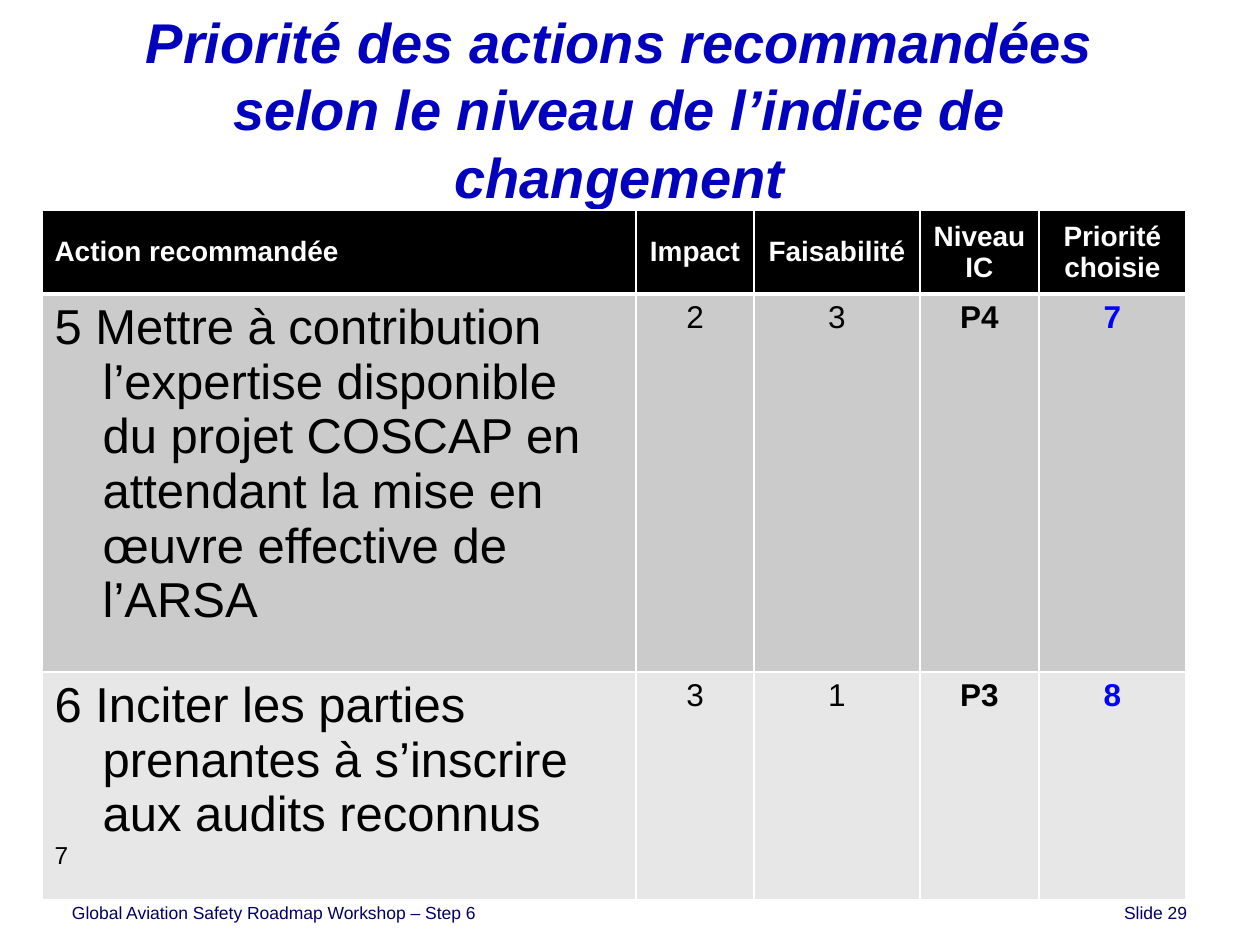
from lxml import etree
from pptx import Presentation
from pptx.dml.color import RGBColor
from pptx.enum.text import MSO_ANCHOR, MSO_AUTO_SIZE, PP_ALIGN
from pptx.oxml.ns import qn
from pptx.util import Pt

LEFT, CENTER, RIGHT = PP_ALIGN.LEFT, PP_ALIGN.CENTER, PP_ALIGN.RIGHT
TOP, MIDDLE = MSO_ANCHOR.TOP, MSO_ANCHOR.MIDDLE
EMU_PER_PX = 914400 / 126


def px(length):
    return round(length * EMU_PER_PX)


def write(para, text, size, color, bold=False, italic=False, align=LEFT, hanging=0):
    para.alignment = align
    if hanging:
        properties = para._p.get_or_add_pPr()
        properties.set("marL", str(px(hanging)))
        properties.set("indent", str(px(-hanging)))
    span = para.add_run()
    span.text = text
    span.font.name = "Arial"
    span.font.size = Pt(size)
    span.font.bold = bold
    span.font.italic = italic
    span.font.color.rgb = RGBColor.from_string(color)


deck = Presentation()
deck.slide_width, deck.slide_height = px(1260), px(945)
page = deck.slides.add_slide(deck.slide_layouts[5])

# Title
title = page.shapes.title
title.left, title.top, title.width, title.height = px(63), px(52), px(1113), px(113)
title.text_frame.auto_size = MSO_AUTO_SIZE.NONE
title.text_frame.vertical_anchor = MIDDLE
write(title.text_frame.paragraphs[0],
      "Priorité des actions recommandées selon le niveau de l’indice de changement",
      32, "0202BE", bold=True, italic=True, align=CENTER)

# Table of recommended actions; each cell of the first column lists its paragraphs
header = ["Action recommandée", "Impact", "Faisabilité", "Niveau IC", "Priorité choisie"]
actions = [
    [[("5 Mettre à contribution l’expertise disponible du projet COSCAP en attendant "
       "la mise en œuvre effective de l’ARSA", 28)], "2", "3", "P4", "7"],
    [[("6 Inciter les parties prenantes à s’inscrire aux audits reconnus", 28), ("7", 14)],
     "3", "1", "P3", "8"],
]
column_widths = [594, 118, 166, 119, 147]
row_heights = [84, 378, 228]
row_fills = ["000000", "CBCBCB", "E7E7E7"]
value_formats = [{"color": "000000"}, {"color": "000000"},
                 {"color": "000000", "bold": True}, {"color": "0000FF", "bold": True}]

table = page.shapes.add_table(len(row_heights), len(column_widths), px(42), px(210),
                              px(sum(column_widths)), px(sum(row_heights))).table
for column, width in zip(table.columns, column_widths):
    column.width = px(width)
for row, height in zip(table.rows, row_heights):
    row.height = px(height)

for column, text in enumerate(header):
    cell = table.cell(0, column)
    cell.vertical_anchor = MIDDLE
    write(cell.text_frame.paragraphs[0], text, 16, "FFFFFF", bold=True,
          align=CENTER if column else LEFT)

for row, (action, *values) in enumerate(actions, start=1):
    frame = table.cell(row, 0).text_frame
    for index, (text, size) in enumerate(action):
        para = frame.add_paragraph() if index else frame.paragraphs[0]
        write(para, text, size, "000000", hanging=48)
    for column, (value, style) in enumerate(zip(values, value_formats), start=1):
        cell = table.cell(row, column)
        cell.vertical_anchor = TOP
        write(cell.text_frame.paragraphs[0], value, 18, align=CENTER, **style)

# White cell borders, thicker under the header
for row, fill in enumerate(row_fills):
    for cell in table.rows[row].cells:
        properties = cell._tc.get_or_add_tcPr()
        for side in ("lnL", "lnR", "lnT", "lnB"):
            thick = (row, side) in ((0, "lnB"), (1, "lnT"))
            line = etree.SubElement(properties, qn(f"a:{side}"), w=str(Pt(3 if thick else 1)))
            solid = etree.SubElement(line, qn("a:solidFill"))
            etree.SubElement(solid, qn("a:srgbClr"), val="FFFFFF")
        cell.fill.solid()
        cell.fill.fore_color.rgb = RGBColor.from_string(fill)

# Footer: workshop name on the left, slide number on the right
footer_parts = [("Global Aviation Safety Roadmap Workshop – Step 6", 72, 800, LEFT),
                ("Slide 29", 987, 200, RIGHT)]
for text, left, width, align in footer_parts:
    frame = page.shapes.add_textbox(px(left), px(896), px(width), px(40)).text_frame
    frame.word_wrap = True
    frame.margin_left = frame.margin_right = 0
    write(frame.paragraphs[0], text, 10, "000066", align=align)

deck.save("out.pptx")
